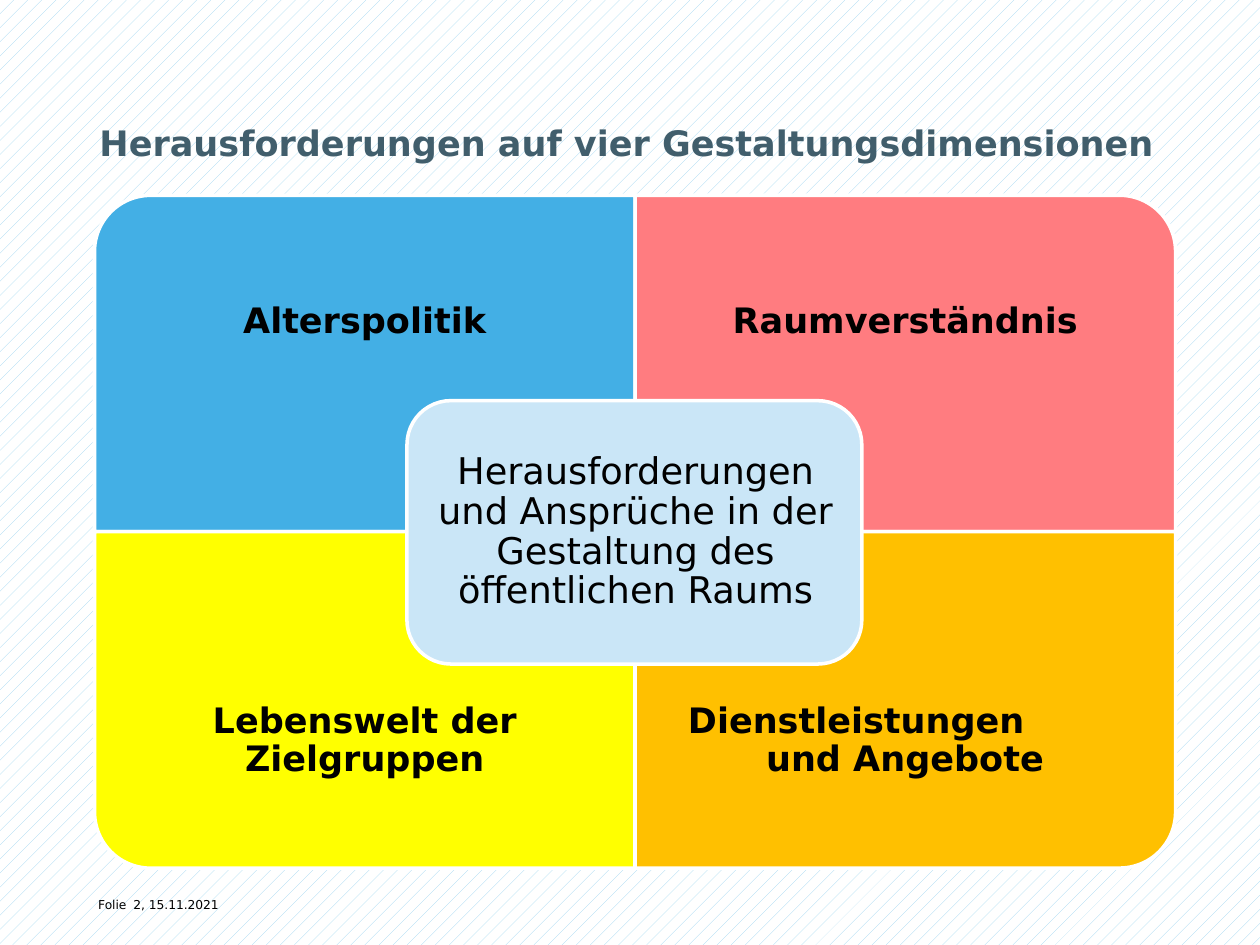
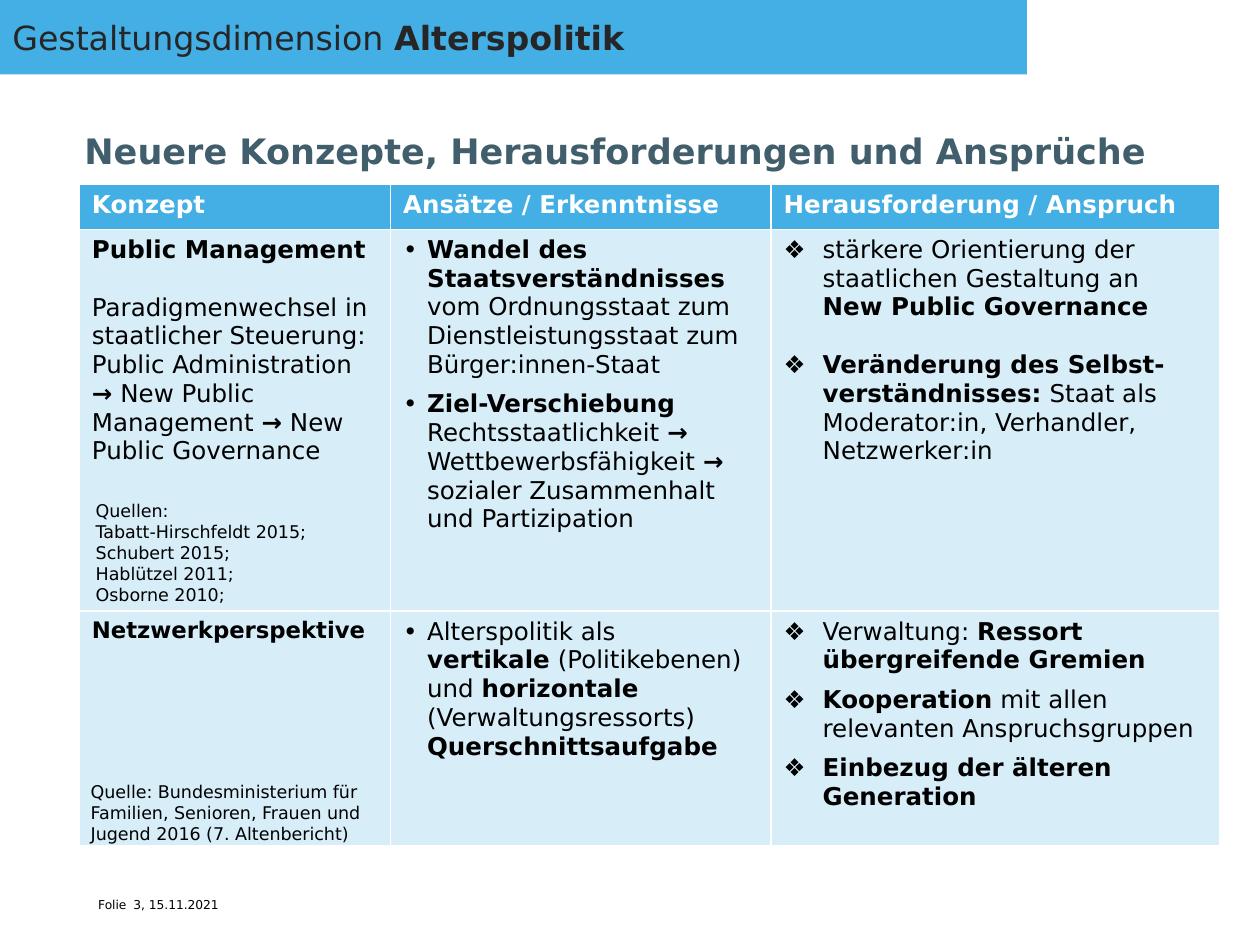
from dataclasses import dataclass

from lxml import etree
from pptx import Presentation
from pptx.dml.color import RGBColor
from pptx.enum.dml import MSO_PATTERN
from pptx.enum.shapes import MSO_SHAPE
from pptx.enum.text import MSO_ANCHOR, PP_ALIGN
from pptx.oxml.ns import qn
from pptx.util import Inches, Pt

FONT = "DejaVu Sans"
BLACK = RGBColor(0x00, 0x00, 0x00)
WHITE = RGBColor(0xFF, 0xFF, 0xFF)
SLATE = RGBColor(0x41, 0x5E, 0x6C)
CHARCOAL = RGBColor(0x26, 0x26, 0x26)
BLUE = RGBColor(0x43, 0xAF, 0xE5)
STRIPE_BLUE = RGBColor(0x9A, 0xD4, 0xF1)
CENTER_BLUE = RGBColor(0xCA, 0xE6, 0xF7)
CELL_BLUE = RGBColor(0xD7, 0xEE, 0xF9)
RED = RGBColor(0xFF, 0x7C, 0x80)
YELLOW = RGBColor(0xFF, 0xFF, 0x00)
ORANGE = RGBColor(0xFF, 0xC0, 0x00)

RECTANGLE = MSO_SHAPE.RECTANGLE
ROUNDED = MSO_SHAPE.ROUNDED_RECTANGLE
ONE_ROUND_CORNER = MSO_SHAPE.ROUND_1_RECTANGLE
PERCENT_10 = MSO_PATTERN.PERCENT_10
TOP, MIDDLE, BOTTOM = MSO_ANCHOR.TOP, MSO_ANCHOR.MIDDLE, MSO_ANCHOR.BOTTOM
LEFT, CENTER = PP_ALIGN.LEFT, PP_ALIGN.CENTER

DATE = "15.11.2021"
LINE_GAP = 16.5  # height of one 14-point line, in points


@dataclass(frozen=True)
class Box:
    left: float
    top: float
    width: float
    height: float

    def lengths(self) -> tuple:
        return tuple(Inches(n) for n in (self.left, self.top, self.width, self.height))


@dataclass(frozen=True)
class Style:
    size: float
    color: RGBColor = BLACK
    bold: bool = False
    align: PP_ALIGN = LEFT
    spacing: float = 1.0


@dataclass(frozen=True)
class Item:
    """A paragraph: ** switches bold, \\v breaks the line."""
    text: str
    before: float = 0
    bullet: str = ""
    hanging: float = 0
    size: float = 14


@dataclass(frozen=True)
class Quadrant:
    column: int
    row: int
    rotation: int
    fill: RGBColor
    label: str


TITLE = Style(20, SLATE, bold=True)
FOOTER = Style(7)
SOURCE = Style(10)
QUADRANT_LABEL = Style(20, bold=True, align=CENTER, spacing=0.9)
CENTER_LABEL = Style(21, align=CENTER, spacing=0.9)


def write(paragraph, text: str, style: Style) -> None:
    """Fill a paragraph, switching bold at every ** mark."""
    bold = style.bold
    for part in text.split("**"):
        for number, line in enumerate(part.split("\v")):
            if number:
                paragraph.add_line_break()
            if line:
                run = paragraph.add_run()
                run.text = line
                run.font.name = FONT
                run.font.size = Pt(style.size)
                run.font.color.rgb = style.color
                run.font.bold = bold
        bold = not bold
    # Line breaks take the text size too
    for line_break in paragraph._p.findall(qn("a:br")):
        etree.SubElement(line_break, qn("a:rPr"), sz=str(int(style.size * 100)))
    paragraph.alignment = style.align
    paragraph.line_spacing = style.spacing


def set_indent(paragraph, margin: float, first_line: float) -> None:
    properties = paragraph._p.get_or_add_pPr()
    properties.set("marL", str(Inches(margin)))
    properties.set("indent", str(Inches(first_line)))


def set_bullet(paragraph, item: Item) -> None:
    set_indent(paragraph, item.hanging, -item.hanging)
    properties = paragraph._p.get_or_add_pPr()
    etree.SubElement(properties, qn("a:buFont"), typeface=FONT)
    etree.SubElement(properties, qn("a:buChar"), char=item.bullet)


def add_text(slide, box: Box, lines: list[str], style: Style,
             inset: float = 0.08, anchor: MSO_ANCHOR = TOP):
    frame = slide.shapes.add_textbox(*box.lengths()).text_frame
    frame.word_wrap = True
    frame.vertical_anchor = anchor
    frame.margin_left = frame.margin_right = Inches(inset)
    frame.margin_top = frame.margin_bottom = Inches(inset)
    for number, line in enumerate(lines):
        paragraph = frame.add_paragraph() if number else frame.paragraphs[0]
        write(paragraph, line, style)
    return frame


def add_panel(slide, kind: MSO_SHAPE, box: Box, fill: RGBColor, outlined: bool = True):
    shape = slide.shapes.add_shape(kind, *box.lengths())
    shape.shadow.inherit = False
    shape.fill.solid()
    shape.fill.fore_color.rgb = fill
    if outlined:
        shape.line.color.rgb = WHITE
        shape.line.width = Pt(2)
    else:
        shape.line.fill.background()
    return shape


def add_slide(presentation, number: int, title: str, title_box: Box):
    """Add a blank slide with the shared title and footer."""
    slide = presentation.slides.add_slide(presentation.slide_layouts[6])
    add_text(slide, Box(0.7, 7.06, 2.96, 0.3), ["Folie"], FOOTER)
    add_text(slide, Box(0.98, 7.06, 8.87, 0.44), [f"{number}, {DATE}"], FOOTER)
    add_text(slide, title_box, [title], TITLE, anchor=BOTTOM)
    return slide


# Slide with the four dimensions
GRID_LEFT, GRID_TOP = 0.75, 1.55
QUADRANT_WIDTH, QUADRANT_HEIGHT, LABEL_HEIGHT = 4.29, 2.67, 2.01
QUADRANTS = [
    Quadrant(0, 0, 270, BLUE, "Alterspolitik"),
    Quadrant(1, 0, 0, RED, "Raumverständnis"),
    Quadrant(0, 1, 180, YELLOW, "Lebenswelt der Zielgruppen"),
    Quadrant(1, 1, 90, ORANGE, "Dienstleistungen\vund Angebote"),
]


def add_quadrant(slide, quadrant: Quadrant) -> None:
    left = GRID_LEFT + quadrant.column * QUADRANT_WIDTH
    top = GRID_TOP + quadrant.row * QUADRANT_HEIGHT
    box = Box(left, top, QUADRANT_WIDTH, QUADRANT_HEIGHT)
    if quadrant.rotation % 180:
        # A quarter turn swaps the sides around the same centre
        shift = (QUADRANT_WIDTH - QUADRANT_HEIGHT) / 2
        box = Box(left + shift, top - shift, QUADRANT_HEIGHT, QUADRANT_WIDTH)
    add_panel(slide, ONE_ROUND_CORNER, box, quadrant.fill).rotation = quadrant.rotation

    label_top = top + quadrant.row * (QUADRANT_HEIGHT - LABEL_HEIGHT)
    label_box = Box(left, label_top, QUADRANT_WIDTH, LABEL_HEIGHT)
    frame = add_text(slide, label_box, [quadrant.label], QUADRANT_LABEL, 0.16, MIDDLE)
    if "\v" in quadrant.label:
        # Stepped label: the second line starts further right
        frame.paragraphs[0].alignment = LEFT
        set_indent(frame.paragraphs[0], 0.88, -0.62)


def build_dimensions(presentation) -> None:
    slide = add_slide(presentation, 2, "Herausforderungen auf vier Gestaltungsdimensionen",
                      Box(0.71, 0.76, 8.93, 0.62))
    background = slide.background.fill
    background.patterned()
    background.pattern = PERCENT_10
    background.fore_color.rgb = STRIPE_BLUE
    background.back_color.rgb = WHITE

    for quadrant in QUADRANTS:
        add_quadrant(slide, quadrant)
    add_panel(slide, ROUNDED, Box(3.23, 3.18, 3.61, 2.09), CENTER_BLUE)
    add_text(slide, Box(3.34, 3.28, 3.41, 1.89),
             ["Herausforderungen und Ansprüche in der Gestaltung des öffentlichen Raums"],
             CENTER_LABEL, 0.09, MIDDLE)


# Slide with the concept table
def dot(text: str, before: float = 0) -> Item:
    return Item(text, before, "•", 0.19)


def diamond(text: str, before: float = 0) -> Item:
    return Item(text, before, "❖", 0.31)


COLUMN_WIDTHS = [2.47, 3.02, 3.56]
ROW_HEIGHTS = [0.36, 3.03, 1.86]
CELLS = [
    [[Item("**Konzept")], [Item("**Ansätze / Erkenntnisse")],
     [Item("**Herausforderung / Anspruch")]],
    [
        [Item("**Public Management"),
         Item("Paradigmenwechsel in staatlicher Steuerung:\vPublic Administration **→** "
              "New Public Management **→** New Public Governance", LINE_GAP)],
        [dot("**Wandel des Staatsverständnisses**\vvom Ordnungsstaat zum "
             "Dienstleistungsstaat zum Bürger:innen-Staat"),
         dot("**Ziel-Verschiebung** Rechtsstaatlichkeit **→** Wettbewerbsfähigkeit "
             "**→** sozialer Zusammenhalt und Partizipation", 6)],
        [diamond("stärkere Orientierung der staatlichen Gestaltung an\v"
                 "**New Public Governance"),
         diamond("**Veränderung des Selbst-verständnisses:** Staat als Moderator:in, "
                 "Verhandler, Netzwerker:in", LINE_GAP)],
    ],
    [
        [Item("**Netzwerkperspektive", size=13)],
        [dot("Alterspolitik als\v**vertikale** (Politikebenen) und **horizontale** "
             "(Verwaltungsressorts) **Querschnittsaufgabe")],
        [diamond("Verwaltung: **Ressort übergreifende Gremien"),
         diamond("**Kooperation** mit allen relevanten Anspruchsgruppen", 6),
         diamond("**Einbezug der älteren Generation", 6)],
    ],
]


def fill_cell(cell, items: list[Item], is_header: bool) -> None:
    cell.fill.solid()
    cell.fill.fore_color.rgb = BLUE if is_header else CELL_BLUE
    for number, item in enumerate(items):
        frame = cell.text_frame
        paragraph = frame.add_paragraph() if number else frame.paragraphs[0]
        if item.bullet:
            set_bullet(paragraph, item)
        write(paragraph, item.text, Style(item.size, WHITE if is_header else BLACK))
        if item.before:
            paragraph.space_before = Pt(item.before)


def add_concept_table(slide) -> None:
    box = Box(0.63, 1.46, sum(COLUMN_WIDTHS), sum(ROW_HEIGHTS))
    table = slide.shapes.add_table(len(ROW_HEIGHTS), len(COLUMN_WIDTHS), *box.lengths()).table
    table.horz_banding = False
    for column, width in zip(table.columns, COLUMN_WIDTHS):
        column.width = Inches(width)
    for row_number, (row, height) in enumerate(zip(table.rows, ROW_HEIGHTS)):
        row.height = Inches(height)
        for cell, items in zip(row.cells, CELLS[row_number]):
            fill_cell(cell, items, row_number == 0)


def build_age_policy(presentation) -> None:
    slide = add_slide(presentation, 3, "Neuere Konzepte, Herausforderungen und Ansprüche",
                      Box(0.59, 0.84, 9.29, 0.6))
    add_concept_table(slide)

    # Band naming the dimension
    band = add_panel(slide, RECTANGLE, Box(0, 0, 8.15, 0.59), BLUE, outlined=False)
    band.text_frame.vertical_anchor = MIDDLE
    write(band.text_frame.paragraphs[0], "Gestaltungsdimension **Alterspolitik",
          Style(19, CHARCOAL))

    # Sources inside the first column
    add_text(slide, Box(0.64, 6.12, 2.4, 0.61),
             ["Quelle: Bundesministerium für Familien, Senioren, Frauen und "
              "Jugend 2016 (7. Altenbericht)"], SOURCE)
    add_text(slide, Box(0.68, 3.89, 2.23, 0.94),
             ["Quellen:\vTabatt-Hirschfeldt 2015; Schubert 2015;",
              "Hablützel 2011;\vOsborne 2010;"], SOURCE)


def main() -> None:
    presentation = Presentation()
    presentation.slide_width = Inches(10)
    presentation.slide_height = Inches(7.5)
    build_dimensions(presentation)
    build_age_policy(presentation)
    presentation.save("out.pptx")


if __name__ == "__main__":
    main()
